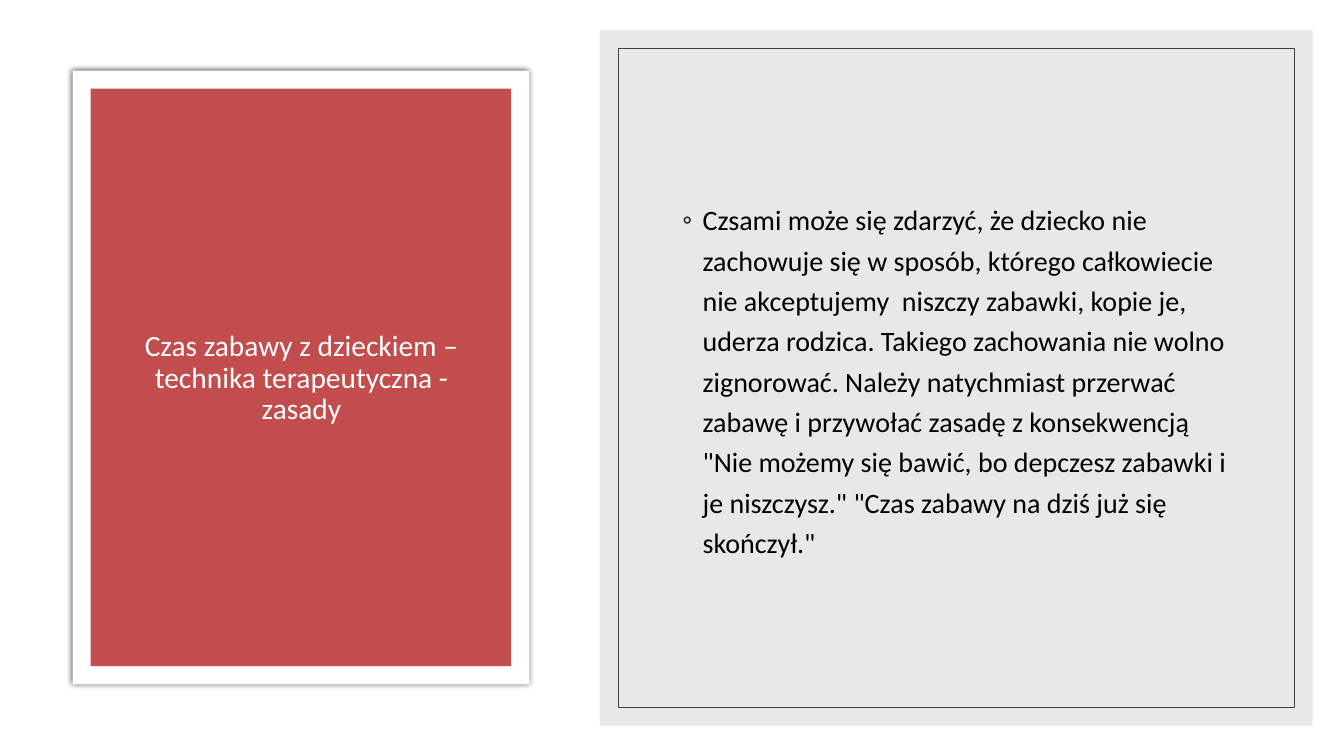
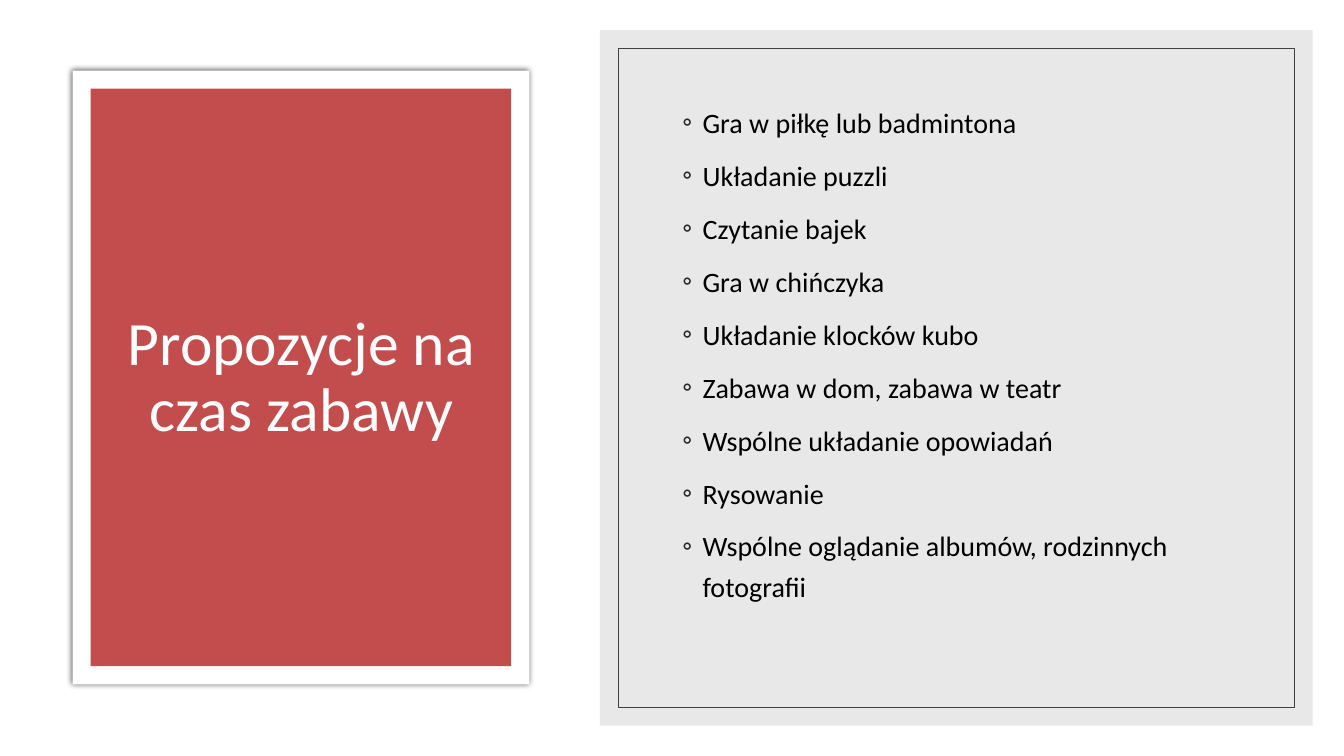
from dataclasses import dataclass

import lxml.etree
import pptx
import pptx.dml.color
import pptx.enum.shapes
import pptx.enum.text
import pptx.oxml.ns
import pptx.util

Inches = pptx.util.Inches
Pt = pptx.util.Pt
qn = pptx.oxml.ns.qn


@dataclass(frozen=True)
class Theme:
    font: str = "Calibri"
    paper: str = "FFFFFF"
    accent: str = "C34D4D"
    panel: str = "D9D9D9"
    panel_opacity: int = 60
    frame: str = "404040"
    bullet: str = "262626"
    ink: str = "000000"
    shadow: str = "000000"
    shadow_opacity: int = 66
    shadow_blur: int = 4
    title_size: int = 44
    long_title_size: int = 21
    body_size: int = 20
    frame_width: float = 0.5
    border: float = 0.18


def rgb(code):
    return pptx.dml.color.RGBColor.from_string(code)


def add_color(parent, code, opacity=None):
    color = lxml.etree.SubElement(parent, qn("a:srgbClr"), val=code)
    if opacity is not None:
        lxml.etree.SubElement(color, qn("a:alpha"), val=str(opacity * 1000))


def write_text(frame, lines, *, font, size, color, align, spacing, before=0, bullet=None):
    for index, line in enumerate(lines):
        paragraph = frame.paragraphs[0] if index == 0 else frame.add_paragraph()
        paragraph.alignment = align
        paragraph.line_spacing = spacing
        paragraph.space_before = Pt(before)
        run = paragraph.add_run()
        run.text = line
        run.font.name = font
        run.font.size = Pt(size)
        run.font.color.rgb = rgb(color)
        if bullet:
            properties = paragraph._p.get_or_add_pPr()
            properties.set("marL", str(Inches(0.2)))
            properties.set("indent", str(Inches(-0.2)))
            add_color(lxml.etree.SubElement(properties, qn("a:buClr")), bullet)
            lxml.etree.SubElement(properties, qn("a:buFont"), typeface=font)
            lxml.etree.SubElement(properties, qn("a:buChar"), char="◦")


class Deck:
    def __init__(self, theme):
        self.theme = theme
        self.presentation = pptx.Presentation()
        self.presentation.slide_width = Inches(13.33)
        self.presentation.slide_height = Inches(7.5)
        self.slide = None

    def new_slide(self):
        blank = self.presentation.slide_layouts[6]
        self.slide = self.presentation.slides.add_slide(blank)
        background = self.slide.background.fill
        background.solid()
        background.fore_color.rgb = rgb(self.theme.paper)

    def rectangle(self, box, fill=None, opacity=None, line=None):
        shape = self.slide.shapes.add_shape(
            pptx.enum.shapes.MSO_SHAPE.RECTANGLE, *map(Inches, box)
        )
        shape.shadow.inherit = False
        if fill:
            shape.fill.solid()
            shape.fill.fore_color.rgb = rgb(fill)
            if opacity is not None:
                solid = shape._element.spPr.find(qn("a:solidFill"))
                solid.clear()
                add_color(solid, fill, opacity)
        else:
            shape.fill.background()
        if line:
            shape.line.color.rgb = rgb(line)
            shape.line.width = Pt(self.theme.frame_width)
        else:
            shape.line.fill.background()
        return shape

    def inner(self, box):
        left, top, width, height = box
        border = self.theme.border
        return left + border, top + border, width - 2 * border, height - 2 * border

    def title_card(self):
        theme = self.theme
        box = (0.72, 0.7, 4.53, 6.09)
        card = self.rectangle(box, fill=theme.paper)
        effects = card._element.spPr.find(qn("a:effectLst"))
        glow = lxml.etree.SubElement(
            effects, qn("a:outerShdw"), blurRad=str(Pt(theme.shadow_blur)),
            dist="0", dir="0", algn="ctr", rotWithShape="0",
        )
        add_color(glow, theme.shadow, theme.shadow_opacity)
        self.rectangle(self.inner(box), fill=theme.accent)

    def body_panel(self):
        theme = self.theme
        box = (5.95, 0.3, 7.07, 6.9)
        self.rectangle(box, fill=theme.panel, opacity=theme.panel_opacity)
        self.rectangle(self.inner(box), line=theme.frame)

    def text_area(self, box, lines, bottom=0.05, **style):
        frame = self.slide.shapes.add_textbox(*map(Inches, box)).text_frame
        frame.word_wrap = True
        frame.vertical_anchor = pptx.enum.text.MSO_ANCHOR.MIDDLE
        frame.margin_bottom = Inches(bottom)
        write_text(frame, lines, font=self.theme.font, **style)

    def title(self, text, size):
        self.text_area(
            (1.08, 1.3, 3.82, 4.91), [text], size=size, color=self.theme.paper,
            align=pptx.enum.text.PP_ALIGN.CENTER, spacing=0.9,
        )

    def bullets(self, lines, bottom):
        self.text_area(
            (6.67, 1.02, 5.66, 5.45), lines, bottom=bottom,
            size=self.theme.body_size, color=self.theme.ink,
            align=pptx.enum.text.PP_ALIGN.LEFT, spacing=1.2, before=9,
            bullet=self.theme.bullet,
        )

    def topic(self, title, size, lines, bottom=0.05):
        self.new_slide()
        self.title_card()
        self.title(title, size)
        self.body_panel()
        self.bullets(lines, bottom)


def main():
    theme = Theme()
    deck = Deck(theme)
    deck.topic(
        "Czas zabawy z dzieckiem – technika terapeutyczna - zasady",
        theme.long_title_size,
        [
            "Czsami może się zdarzyć, że dziecko nie zachowuje się w sposób, "
            "którego całkowiecie nie akceptujemy  niszczy zabawki, kopie je, "
            "uderza rodzica. Takiego zachowania nie wolno zignorować. Należy "
            "natychmiast przerwać zabawę i przywołać zasadę z konsekwencją "
            '"Nie możemy się bawić, bo depczesz zabawki i je niszczysz." '
            '"Czas zabawy na dziś już się skończył."'
        ],
    )
    deck.topic(
        "Propozycje na czas zabawy",
        theme.title_size,
        [
            "Gra w piłkę lub badmintona",
            "Układanie puzzli",
            "Czytanie bajek",
            "Gra w chińczyka",
            "Układanie klocków kubo",
            "Zabawa w dom, zabawa w teatr",
            "Wspólne układanie opowiadań",
            "Rysowanie",
            "Wspólne oglądanie albumów, rodzinnych fotografii",
        ],
        bottom=0.58,
    )
    deck.presentation.save("out.pptx")


if __name__ == "__main__":
    main()
